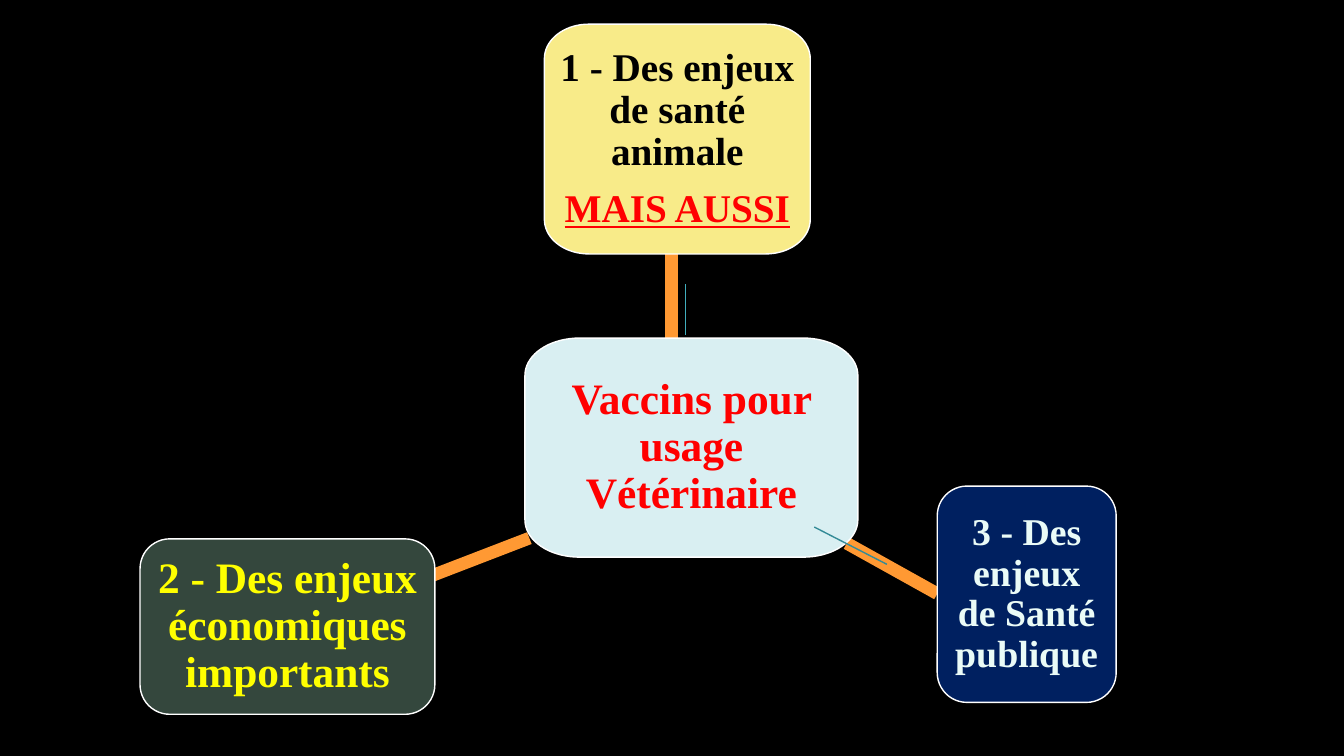
from math import cos, radians, sin

from lxml.etree import SubElement
from pptx import Presentation
from pptx.dml.color import RGBColor
from pptx.enum.shapes import MSO_CONNECTOR, MSO_SHAPE
from pptx.enum.text import MSO_ANCHOR, PP_ALIGN
from pptx.oxml.ns import qn
from pptx.util import Cm, Pt

BLACK = RGBColor(0x00, 0x00, 0x00)
WHITE = RGBColor(0xFF, 0xFF, 0xFF)
RED = RGBColor(0xFF, 0x00, 0x00)
YELLOW = RGBColor(0xFF, 0xFF, 0x00)
MINT = RGBColor(0xEA, 0xFB, 0xF7)
ORANGE = RGBColor(0xFF, 0x99, 0x33)
TURQUOISE = RGBColor(0x41, 0xAE, 0xBD)
TEAL = RGBColor(0x34, 0x8B, 0x97)
PALE_BLUE = RGBColor(0xD9, 0xEF, 0xF2)
PALE_YELLOW = RGBColor(0xF8, 0xEB, 0x89)
NAVY = RGBColor(0x00, 0x20, 0x60)
DARK_GREEN = RGBColor(0x34, 0x47, 0x3D)

prs = Presentation()
prs.slide_width, prs.slide_height = Cm(33.87), Cm(19.05)
slide = prs.slides.add_slide(prs.slide_layouts[6])
slide.background.fill.solid()
slide.background.fill.fore_color.rgb = BLACK


def add_line(start, end, colour, weight):
    line = slide.shapes.add_connector(
        MSO_CONNECTOR.STRAIGHT, *(Cm(value) for value in start + end))
    line.line.color.rgb = colour
    line.line.width = Pt(weight)
    SubElement(line._element.spPr, qn("a:effectLst"))


def add_rounded_box(left, top, width, height, rx, ry):
    """Use the preset for circular corners, an outline for elliptical ones."""
    if rx == ry:
        box = slide.shapes.add_shape(
            MSO_SHAPE.ROUNDED_RECTANGLE, Cm(left), Cm(top), Cm(width), Cm(height))
        box.adjustments[0] = rx / min(width, height)
        return box
    right, bottom = left + width, top + height
    corners = [(right - rx, bottom - ry), (left + rx, bottom - ry),
               (left + rx, top + ry), (right - rx, top + ry)]
    points = []
    for quarter, (x, y) in enumerate(corners):
        for step in range(0, 91, 5):
            angle = radians(90 * quarter + step)
            points.append((Cm(x + rx * cos(angle)), Cm(y + ry * sin(angle))))
    outline = slide.shapes.build_freeform(*points[0])
    outline.add_line_segments(points[1:], close=True)
    return outline.convert_to_shape()


spokes = [
    ((16.92, 6.1), (16.92, 8.71)),
    ((13.34, 13.56), (10.9, 14.5)),
    ((21.34, 13.69), (23.62, 14.96)),
]
for start, end in spokes:
    add_line(start, end, ORANGE, 9)

# left, top, width, height, corner radii; fill; inset; text size; paragraphs
topics = [
    ((13.23, 8.52, 8.39, 5.52, 1.37, 0.94), PALE_BLUE, 0.53, 31,
     [("Vaccins pour usage Vétérinaire", RED, False)]),
    ((13.72, 0.61, 6.7, 5.79, 1.12, 0.87), PALE_YELLOW, 0.4, 28,
     [("1 - Des enjeux de santé animale", BLACK, False),
      ("MAIS AUSSI", RED, True)]),
    ((3.53, 13.58, 7.43, 4.42, 0.75, 0.75), DARK_GREEN, 0.2, 31,
     [("2 - Des enjeux économiques importants", YELLOW, False)]),
    ((23.62, 12.25, 4.51, 5.45, 0.75, 0.75), NAVY, 0.18, 27,
     [("3 - Des enjeux de Santé publique", MINT, False)]),
]
for geometry, fill, inset, size, paragraphs in topics:
    box = add_rounded_box(*geometry)
    box.shadow.inherit = False
    box.fill.solid()
    box.fill.fore_color.rgb = fill
    box.line.color.rgb = WHITE
    box.line.width = Pt(1)

    frame = box.text_frame
    frame.word_wrap = True
    frame.vertical_anchor = MSO_ANCHOR.MIDDLE
    frame.margin_left = frame.margin_right = Cm(inset)
    frame.margin_top = frame.margin_bottom = Cm(inset)
    for index, (text, colour, underlined) in enumerate(paragraphs):
        paragraph = frame.add_paragraph() if index else frame.paragraphs[0]
        paragraph.text = text
        paragraph.alignment = PP_ALIGN.CENTER
        paragraph.line_spacing = 0.9
        if index:
            paragraph.space_before = Pt(10)
        font = paragraph.font
        font.name = "Times New Roman"
        font.size = Pt(size)
        font.bold = True
        font.underline = underlined
        font.color.rgb = colour

add_line((17.27, 8.43), (17.27, 7.16), TURQUOISE, 0.5)
add_line((20.52, 13.28), (22.35, 14.22), TEAL, 1)

prs.save("out.pptx")
